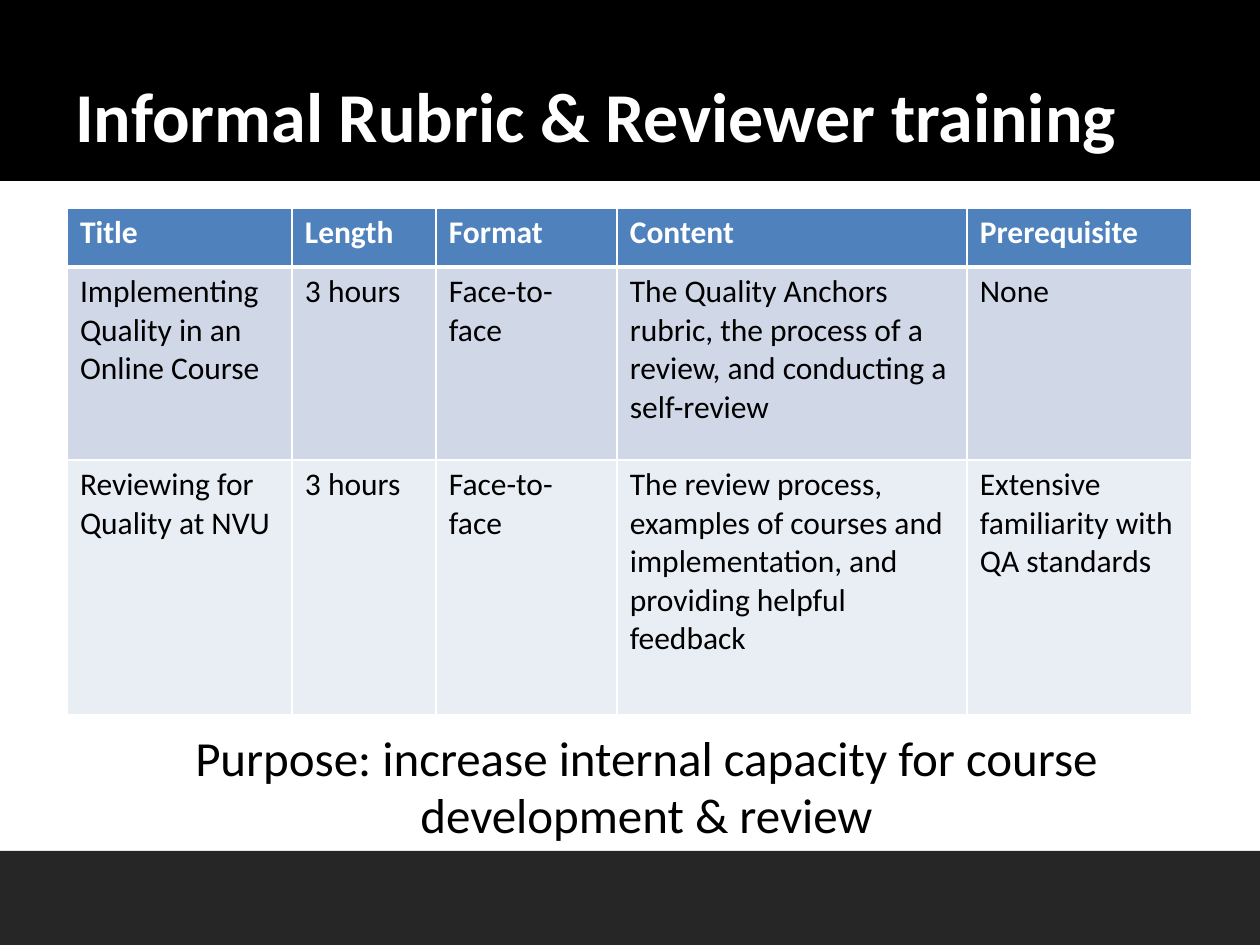
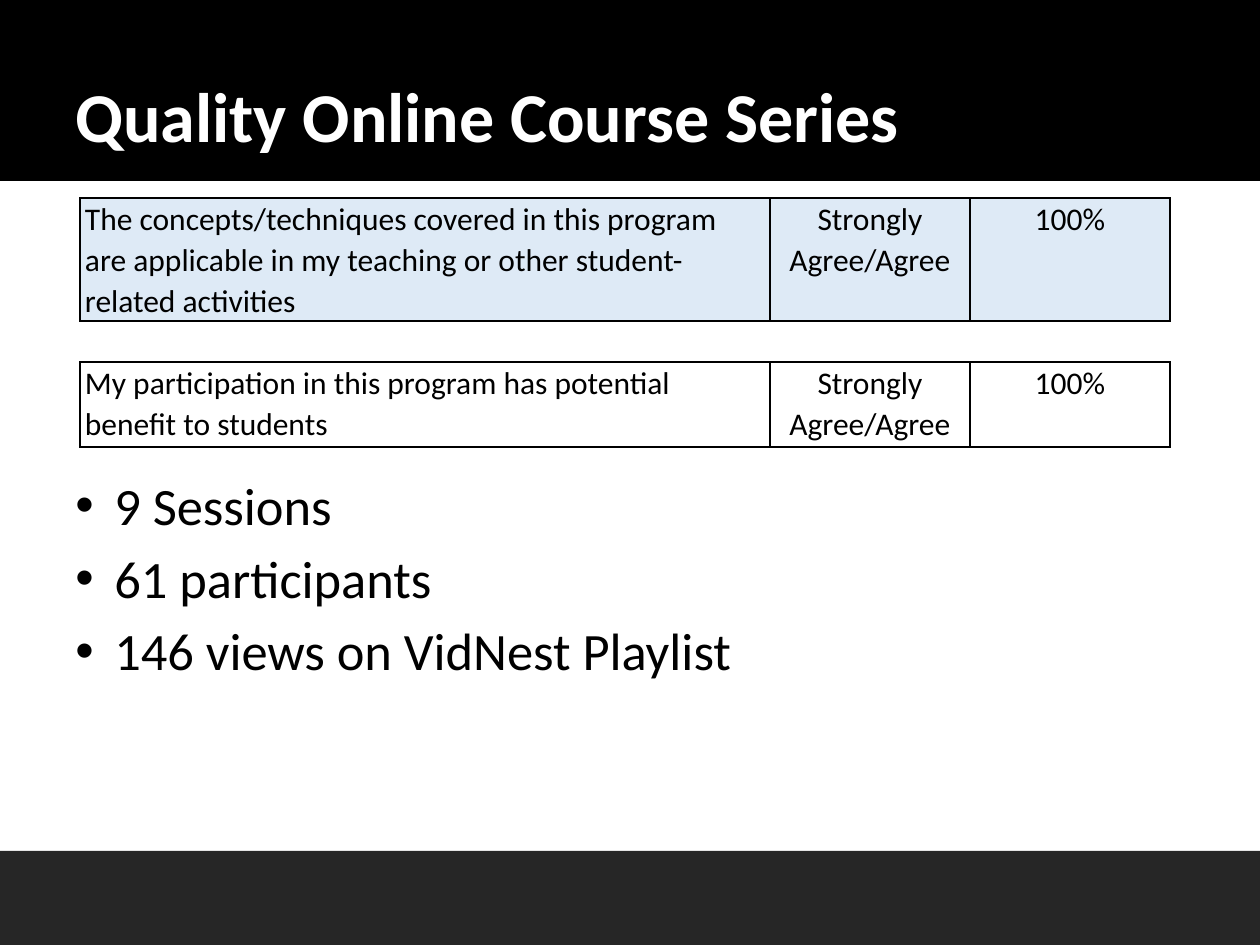
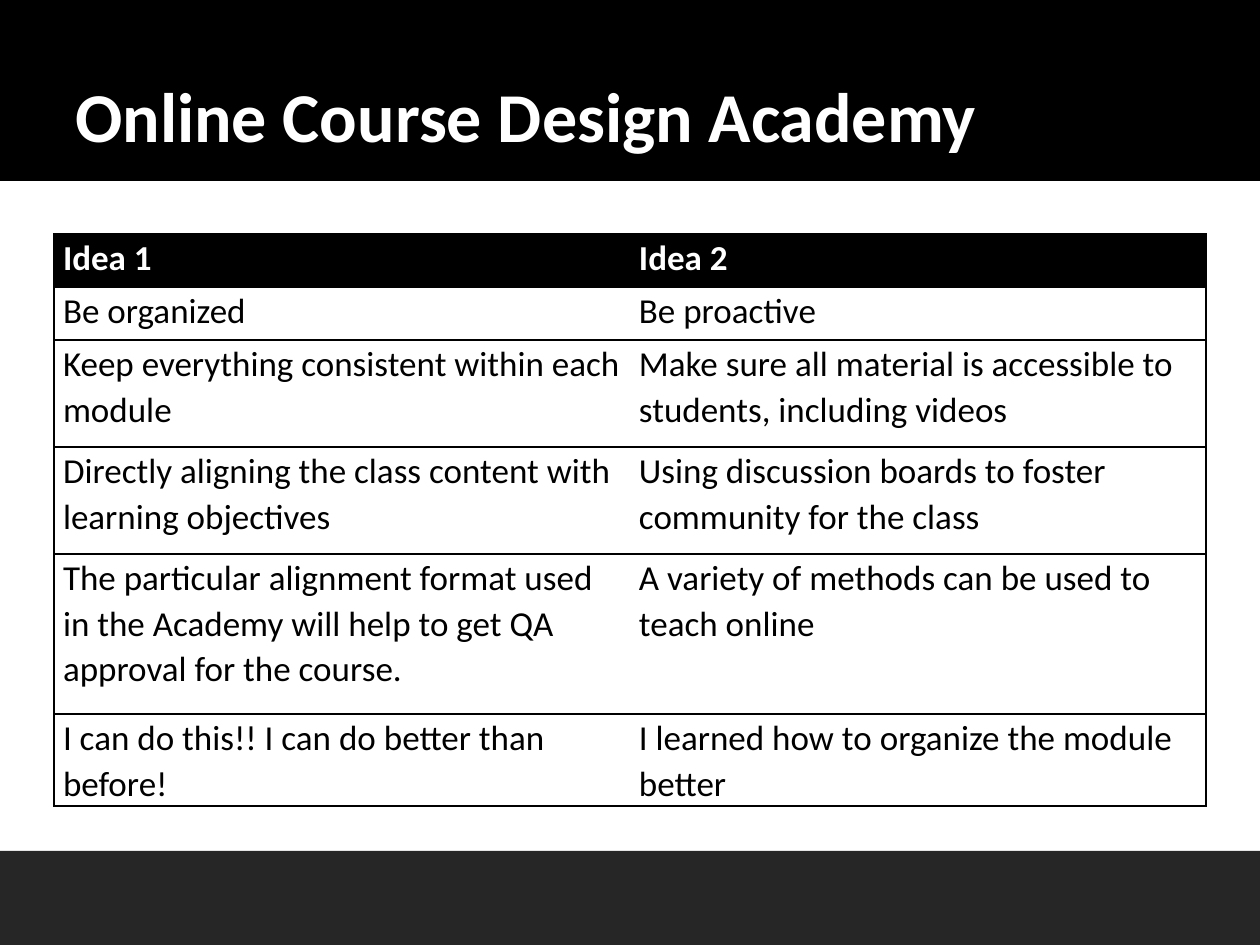
from lxml.etree import SubElement
from pptx import Presentation
from pptx.dml.color import RGBColor
from pptx.enum.shapes import MSO_SHAPE
from pptx.enum.text import MSO_ANCHOR, PP_ALIGN
from pptx.oxml.ns import qn
from pptx.util import Emu, Pt

COLORS = {
    "black": "000000", "white": "FFFFFF", "footer": "262626",
    "header": "4F81BD", "band_dark": "D0D8E8", "band_light": "E9EDF4",
    "survey": "DEEAF6",
}
FONT = "Calibri"


def px(length):
    """Turn pixels, 126 to the inch, into EMU."""
    return Emu(round(length * 914400 / 126))


def write_text(frame, text, size=18, color="black", bold=False, align=PP_ALIGN.LEFT,
               line_spacing=None, space_before=0, indent=0, bullet=None):
    frame.word_wrap = True
    for index, line in enumerate(text.split("\n")):
        paragraph = frame.paragraphs[0] if index == 0 else frame.add_paragraph()
        paragraph.alignment = align
        paragraph.space_before = Pt(space_before)
        if line_spacing:
            paragraph.line_spacing = line_spacing
        properties = paragraph._p.get_or_add_pPr()
        if indent:
            properties.set("marL", str(px(indent)))
        if bullet:
            properties.set("indent", str(-px(indent)))
            SubElement(properties, qn("a:buFont"), typeface="Arial")
            SubElement(properties, qn("a:buChar"), char=bullet)
        run = paragraph.add_run()
        run.text = line
        run.font.name = FONT
        run.font.size = Pt(size)
        run.font.bold = bold
        run.font.color.rgb = RGBColor.from_string(COLORS[color])


training = {
    "title": "Informal Rubric & Reviewer training",
    "place": (67, 208), "columns": [225, 144, 181, 350, 225], "rows": [59, 193, 255],
    "cells": [
        ["Title", "Length", "Format", "Content", "Prerequisite"],
        ["Implementing Quality in an Online Course", "3 hours", "Face-to-face",
         "The Quality Anchors rubric, the process of a review, and conducting a self-review",
         "None"],
        ["Reviewing for Quality at NVU", "3 hours", "Face-to-face",
         "The review process, examples of courses and implementation, "
         "and providing helpful feedback",
         "Extensive familiarity with QA standards"],
    ],
    "fills": ["header", "band_dark", "band_light"], "header": True,
    "sides": [["LRTB"] * 5] * 3, "line": "white", "header_rule": 3,
    "margins": (13, 6), "format": {},
    "body": "Purpose: increase internal capacity for course development & review",
    "body_place": (100, 725, 1060, 116),
    "body_format": {"size": 28, "align": PP_ALIGN.CENTER, "indent": 33,
                    "space_before": 3, "line_spacing": 0.97},
}
series = {
    "title": "Quality Online Course Series",
    "place": (80, 198), "columns": [690, 200, 200], "rows": [123, 41, 85],
    "cells": [
        ["The concepts/techniques covered in this program are applicable in my teaching "
         "or other student-related activities", "Strongly Agree/Agree", "100%"],
        ["", "", ""],
        ["My participation in this program has potential benefit to students",
         "Strongly Agree/Agree", "100%"],
    ],
    "fills": ["survey", None, None], "header": False,
    "sides": [["LRTB"] * 3, ["TB"] * 3, ["LRTB"] * 3], "line": "black", "header_rule": 1,
    "margins": (5, 0), "format": {"line_spacing": 1.07}, "centred_from": 1,
    "body": "9 Sessions\n61 participants\n146 views on VidNest Playlist",
    "body_place": (63, 467, 1134, 362),
    "body_format": {"size": 30, "indent": 39, "bullet": "•", "space_before": 5.5},
}
academy = {
    "title": "Online Course Design Academy",
    "place": (54, 234), "columns": [576, 576], "rows": [53, 53, 107, 107, 160, 92],
    "cells": [
        ["Idea 1", "Idea 2"],
        ["Be organized", "Be proactive"],
        ["Keep everything consistent within each module",
         "Make sure all material is accessible to students, including videos"],
        ["Directly aligning the class content with learning objectives",
         "Using discussion boards to foster community for the class"],
        ["The particular alignment format used in the Academy will help to get QA "
         "approval for the course.",
         "A variety of methods can be used to teach online"],
        ["I can do this!! I can do better than before!",
         "I learned how to organize the module better"],
    ],
    "fills": ["black"] + [None] * 5, "header": True,
    "sides": [["LTB", "RTB"]] * 6, "line": "black", "header_rule": 1,
    "margins": (9, 0), "format": {"size": 20, "line_spacing": 1.07},
}

presentation = Presentation()
presentation.slide_width, presentation.slide_height = px(1260), px(945)

for content in (training, series, academy):
    slide = presentation.slides.add_slide(presentation.slide_layouts[6])

    for top, height, color in ((851, 94, "footer"), (-1, 182, "black")):
        band = slide.shapes.add_shape(MSO_SHAPE.RECTANGLE, 0, px(top), px(1260), px(height))
        band.shadow.inherit = False
        band.fill.solid()
        band.fill.fore_color.rgb = RGBColor.from_string(COLORS[color])
        band.line.fill.background()

    title = slide.shapes.add_textbox(px(63), px(42), px(1134), px(121))
    title.text_frame.vertical_anchor = MSO_ANCHOR.BOTTOM
    write_text(title.text_frame, content["title"], size=40, color="white", bold=True)

    if "body" in content:
        body = slide.shapes.add_textbox(*map(px, content["body_place"]))
        write_text(body.text_frame, content["body"], **content["body_format"])

    left, top = content["place"]
    columns, rows = content["columns"], content["rows"]
    table = slide.shapes.add_table(len(rows), len(columns), px(left), px(top),
                                   px(sum(columns)), px(sum(rows))).table
    table.first_row = content["header"]
    table.horz_banding = False
    for column, width in zip(table.columns, columns):
        column.width = px(width)
    for row, height in zip(table.rows, rows):
        row.height = px(height)

    side_margin, end_margin = map(px, content["margins"])
    for row_index, texts in enumerate(content["cells"]):
        is_header = content["header"] and row_index == 0
        fill = content["fills"][row_index]
        for column_index, text in enumerate(texts):
            cell = table.cell(row_index, column_index)
            cell.margin_left = cell.margin_right = side_margin
            cell.margin_top = cell.margin_bottom = end_margin

            properties = cell._tc.get_or_add_tcPr()
            for side in "LRTB":
                on_header_rule = (row_index, side) in ((0, "B"), (1, "T"))
                line_width = content["header_rule"] if on_header_rule else 1
                border = SubElement(properties, qn(f"a:ln{side}"), w=str(Pt(line_width)))
                if side in content["sides"][row_index][column_index]:
                    line_fill = SubElement(border, qn("a:solidFill"))
                    SubElement(line_fill, qn("a:srgbClr"), val=COLORS[content["line"]])
                else:
                    SubElement(border, qn("a:noFill"))

            if fill:
                cell.fill.solid()
                cell.fill.fore_color.rgb = RGBColor.from_string(COLORS[fill])
            else:
                cell.fill.background()

            if text:
                centred = column_index >= content.get("centred_from", len(columns))
                write_text(cell.text_frame, text, bold=is_header,
                           color="white" if is_header else "black",
                           align=PP_ALIGN.CENTER if centred else PP_ALIGN.LEFT,
                           **content["format"])

presentation.save("out.pptx")
